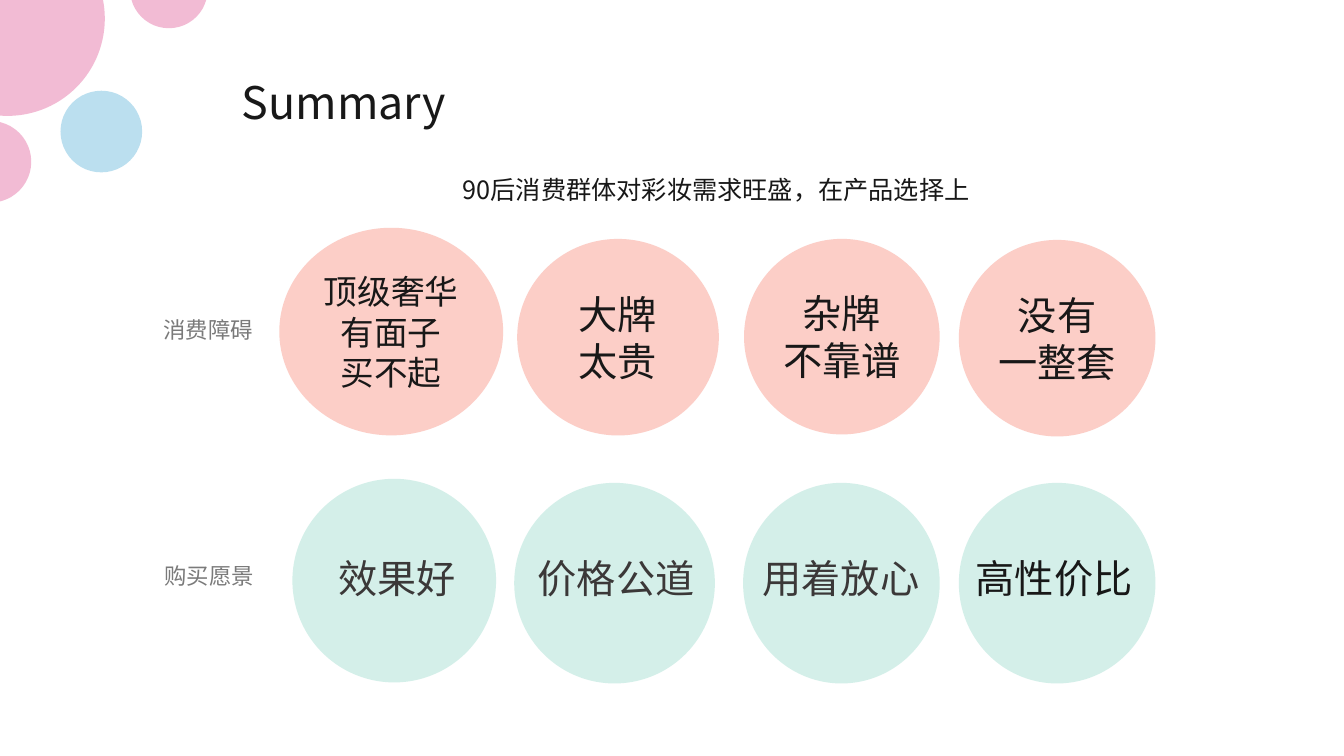
from typing import NamedTuple

from lxml import etree
from pptx import Presentation
from pptx.dml.color import RGBColor
from pptx.enum.shapes import MSO_SHAPE
from pptx.enum.text import MSO_ANCHOR, PP_ALIGN
from pptx.oxml.ns import qn
from pptx.shapes.autoshape import Shape
from pptx.shapes.shapetree import GroupShapes, SlideShapes
from pptx.util import Inches, Pt

OVAL = MSO_SHAPE.OVAL
MIDDLE = MSO_ANCHOR.MIDDLE
LEFT, CENTER = PP_ALIGN.LEFT, PP_ALIGN.CENTER

SLIDE_WIDTH, SLIDE_HEIGHT = Inches(13.33), Inches(7.5)
COLUMN = SLIDE_WIDTH / 13.33
ROW = SLIDE_HEIGHT / 7.5

FONT = "Noto Sans CJK SC"
INK = RGBColor(0x18, 0x18, 0x18)
CHARCOAL = RGBColor(0x3B, 0x38, 0x38)
GRAY = RGBColor(0x7A, 0x7A, 0x7A)
PINK = RGBColor(0xED, 0x9B, 0xBF)
SKY = RGBColor(0x9A, 0xD0, 0xE8)
CORAL = RGBColor(0xFA, 0xAE, 0xA3)
MINT = RGBColor(0xA4, 0xDF, 0xD1)

BUBBLE_OPACITY, OBSTACLE_OPACITY, WISH_OPACITY = 67, 60, 47
WISH_LABEL_TOP, WISH_LABEL_HEIGHT = 5.45, 0.57


class Box(NamedTuple):
    """Left, width in columns; top, height in rows."""
    left: float
    top: float
    width: float
    height: float

    def lengths(self) -> tuple[int, int, int, int]:
        return (round(self.left * COLUMN), round(self.top * ROW),
                round(self.width * COLUMN), round(self.height * ROW))


class Style(NamedTuple):
    size: int
    color: RGBColor = INK
    align: PP_ALIGN = CENTER
    spaced: bool = False


class Bubble(NamedTuple):
    box: Box
    color: RGBColor


class Caption(NamedTuple):
    box: Box
    text: str
    style: Style


class Obstacle(NamedTuple):
    box: Box
    text: str
    size: int = 28


class Wish(NamedTuple):
    box: Box
    label_left: float
    label_width: float
    text: str
    color: RGBColor = CHARCOAL


BUBBLES = [
    Bubble(Box(1.29, -0.49, 0.77, 0.77), PINK),
    Bubble(Box(-0.89, -0.78, 1.93, 1.93), PINK),
    Bubble(Box(0.6, 0.9, 0.81, 0.81), SKY),
    Bubble(Box(-0.5, 1.2, 0.81, 0.81), PINK),
]
ROW_STYLE = Style(16, GRAY, spaced=True)
CAPTIONS = [
    Caption(Box(4.49, 1.71, 5.39, 0.48), "90后消费群体对彩妆需求旺盛，在产品选择上",
            Style(18, align=LEFT, spaced=True)),
    Caption(Box(2.3, 0.75, 2.53, 0.69), "Summary", Style(32, align=LEFT, spaced=True)),
    Caption(Box(1.46, 3.12, 1.21, 0.53), "消费障碍", ROW_STYLE),
    Caption(Box(1.47, 5.56, 1.21, 0.53), "购买愿景", ROW_STYLE),
]
OBSTACLES = [
    Obstacle(Box(2.77, 2.26, 2.22, 2.06), "顶级奢华有面子\n买不起", 24),
    Obstacle(Box(5.13, 2.37, 2, 1.95), "大牌\n太贵"),
    Obstacle(Box(7.38, 2.37, 1.94, 1.94), "杂牌\n不靠谱"),
    Obstacle(Box(9.51, 2.38, 1.95, 1.95), "没有\n一整套"),
]
WISHES = [
    Wish(Box(2.9, 4.75, 2.02, 2.02), 3.13, 1.62, "效果好"),
    Wish(Box(5.1, 4.79, 1.99, 1.99), 5.22, 1.78, "价格公道"),
    Wish(Box(7.37, 4.79, 1.95, 1.99), 7.45, 1.78, "用着放心"),
    Wish(Box(9.51, 4.79, 1.95, 1.99), 9.54, 1.83, "高性价比", INK),
]


def write_text(shape: Shape, text: str, style: Style) -> None:
    frame = shape.text_frame
    frame.word_wrap = True
    frame.text = text
    for para in frame.paragraphs:
        para.alignment = style.align
        if style.spaced:
            para.line_spacing = 0.9
            para.space_before = Pt(10)
        for span in para.runs:
            span.font.size = Pt(style.size)
            span.font.name = FONT
            span.font.color.rgb = style.color
            # East Asian characters take their typeface from a:ea.
            east_asian = etree.SubElement(span.font._element, qn("a:ea"))
            east_asian.set("typeface", FONT)


def add_circle(shapes: SlideShapes | GroupShapes, box: Box,
               color: RGBColor, opacity: int) -> Shape:
    circle = shapes.add_shape(OVAL, *box.lengths())
    circle.shadow.inherit = False
    circle.line.fill.background()
    circle.fill.solid()
    circle.fill.fore_color.rgb = color
    tint = circle._element.spPr.find(qn("a:solidFill"))[0]
    etree.SubElement(tint, qn("a:alpha")).set("val", str(opacity * 1000))
    return circle


def add_caption(shapes: SlideShapes | GroupShapes, caption: Caption) -> None:
    text_box = shapes.add_textbox(*caption.box.lengths())
    write_text(text_box, caption.text, caption.style)


def add_obstacle(shapes: SlideShapes, obstacle: Obstacle) -> None:
    circle = add_circle(shapes, obstacle.box, CORAL, OBSTACLE_OPACITY)
    circle.text_frame.vertical_anchor = MIDDLE
    write_text(circle, obstacle.text, Style(obstacle.size))


def add_wish(shapes: SlideShapes, wish: Wish) -> None:
    group = shapes.add_group_shape()
    add_circle(group.shapes, wish.box, MINT, WISH_OPACITY)
    label_box = Box(wish.label_left, WISH_LABEL_TOP, wish.label_width, WISH_LABEL_HEIGHT)
    add_caption(group.shapes, Caption(label_box, wish.text, Style(28, wish.color)))


def main() -> None:
    deck = Presentation()
    deck.slide_width, deck.slide_height = SLIDE_WIDTH, SLIDE_HEIGHT
    page = deck.slides.add_slide(deck.slide_layouts[6])
    bubbles = page.shapes.add_group_shape()
    for bubble in BUBBLES:
        add_circle(bubbles.shapes, bubble.box, bubble.color, BUBBLE_OPACITY)
    for caption in CAPTIONS:
        add_caption(page.shapes, caption)
    for obstacle in OBSTACLES:
        add_obstacle(page.shapes, obstacle)
    for wish in WISHES:
        add_wish(page.shapes, wish)
    deck.save("out.pptx")


if __name__ == "__main__":
    main()
